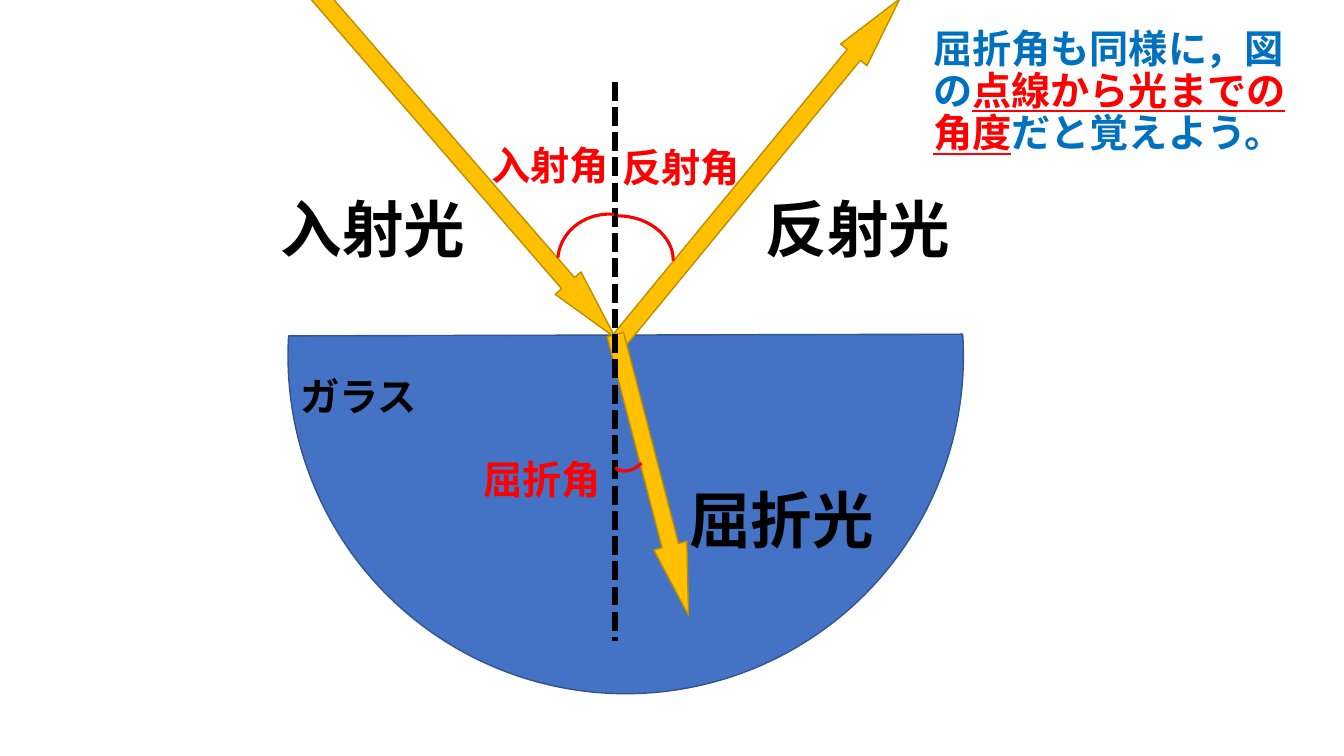
"""Draw a slide on the reflection and refraction of light in glass."""
from dataclasses import dataclass

import lxml.etree
import pptx
import pptx.dml.color
import pptx.enum.dml
import pptx.enum.shapes
import pptx.enum.text
import pptx.oxml.ns
import pptx.util

Cm = pptx.util.Cm
Pt = pptx.util.Pt
Kind = pptx.enum.shapes.MSO_SHAPE
Align = pptx.enum.text.PP_ALIGN
FONT = "Noto Sans CJK JP"
HUES = {
    "black": "000000", "red": "FF0000", "blue": "0070C0",
    "glass": "4472C4", "rim": "325491", "ray": "FFC000", "edge": "BD8E00",
}
BODY = {"line_spacing": 0.9, "space_before": Pt(10)}
MID = {**BODY, "alignment": Align.CENTER}


@dataclass
class Run:
    text: str
    hue: str
    under: bool = False


@dataclass
class Label:
    left: float
    top: float
    width: float
    high: float
    size: int
    runs: list[Run]
    form: dict
    wrap: bool = True


@dataclass
class Figure:
    kind: Kind
    left: float
    top: float
    width: float
    high: float
    turn: float
    line: str
    thick: float
    fill: str | None = None
    adjust: tuple[float, ...] = ()


def color(name: str) -> pptx.dml.color.RGBColor:
    """Return the named colour."""
    return pptx.dml.color.RGBColor.from_string(HUES[name])


def apply(target: object, form: dict) -> None:
    """Set each format value on the target."""
    for key, value in form.items():
        setattr(target, key, value)


def write(slide: pptx.slide.Slide, label: Label) -> None:
    """Add a text label."""
    box = slide.shapes.add_textbox(
        Cm(label.left), Cm(label.top), Cm(label.width), Cm(label.high))
    box.text_frame.word_wrap = label.wrap
    para = box.text_frame.paragraphs[0]
    apply(para, label.form)
    for part in label.runs:
        run = para.add_run()
        run.text = part.text
        apply(run.font, {"name": FONT, "size": Pt(label.size),
                         "bold": True, "underline": part.under})
        run.font.color.rgb = color(part.hue)
        east = lxml.etree.SubElement(
            run.font._element, pptx.oxml.ns.qn("a:ea"))
        east.set("typeface", FONT)


def draw(slide: pptx.slide.Slide, fig: Figure) -> None:
    """Add a preset shape."""
    shape = slide.shapes.add_shape(
        fig.kind, Cm(fig.left), Cm(fig.top), Cm(fig.width), Cm(fig.high))
    shape.rotation = fig.turn
    shape.shadow.inherit = False
    for index, value in enumerate(fig.adjust):
        shape.adjustments[index] = value
    if fig.fill:
        shape.fill.solid()
        shape.fill.fore_color.rgb = color(fig.fill)
    else:
        shape.fill.background()
    shape.line.color.rgb = color(fig.line)
    shape.line.width = Pt(fig.thick)


def normal(slide: pptx.slide.Slide) -> None:
    """Add the dashed line at right angles to the glass."""
    line = slide.shapes.add_connector(
        pptx.enum.shapes.MSO_CONNECTOR.STRAIGHT,
        Cm(15.49), Cm(2.06), Cm(15.49), Cm(16.15))
    line.line.color.rgb = color("black")
    apply(line.line, {"width": Pt(4.5),
                      "dash_style": pptx.enum.dml.MSO_LINE.SQUARE_DOT})
    lxml.etree.SubElement(
        line._element.spPr, pptx.oxml.ns.qn("a:effectLst"))


def ray(left: float, top: float, high: float, turn: float) -> Figure:
    """Describe a ray of light."""
    return Figure(Kind.DOWN_ARROW, left, top, 0.86, high, turn,
                  "edge", 1, "ray", (0.5, 2.12))


def arc(left: float, top: float, width: float, high: float,
        turn: float) -> Figure:
    """Describe the mark of an angle."""
    return Figure(Kind.ARC, left, top, width, high, turn, "red", 2.25)


def title(text: str, left: float, top: float, width: float,
          size: int = 44) -> Label:
    """Describe a black centred label."""
    return Label(left, top, width, 1.45, size, [Run(text, "black")], MID)


def angle(text: str, left: float, top: float) -> Label:
    """Describe the red name of an angle."""
    return Label(left, top, 3.51, 1.45, 28, [Run(text, "red")], {}, False)


GLASS = Figure(Kind.CHORD, 7.26, 0.46, 17.02, 17.02, 311.3,
               "rim", 1, "glass", (27, 139.27))
RAYS = [
    ray(11.28, -1.68, 11.61, 319.1),
    ray(18.69, -1.3, 11.2, 219.4),
    ray(16, 8.31, 7.32, 345.4),
]
ARCS = [
    arc(14.15, 5.44, 2.82, 2.26, 0),
    arc(14.17, 5.28, 2.41, 2.64, 274.7),
    arc(15.34, 11, 1.09, 0.79, 134.5),
]
TITLES = [
    title("入射光", 6.68, 4.9, 5.44),
    title("反射光", 18.77, 4.9, 5.72),
    title("屈折光", 16.56, 12.22, 6.27),
    title("ガラス", 6.32, 9.4, 5.44, 28),
]
ANGLES = [
    angle("入射角", 12.14, 3.43),
    angle("反射角", 15.44, 3.48),
    angle("屈折角", 11.94, 11.35),
]
NOTE = Label(23.27, 0.61, 10.11, 3.84, 28, [
    Run("屈折角も同様に，図の", "blue"),
    Run("点線から光までの角度", "red", True),
    Run("だと覚えよう。", "blue"),
], BODY)


def main() -> None:
    """Build and save the slide."""
    deck = pptx.Presentation()
    apply(deck, {"slide_width": Cm(33.87), "slide_height": Cm(19.05)})
    slide = deck.slides.add_slide(deck.slide_layouts[6])
    for fig in [GLASS, *RAYS]:
        draw(slide, fig)
    for label in TITLES:
        write(slide, label)
    normal(slide)
    for fig in ARCS:
        draw(slide, fig)
    for label in [*ANGLES, NOTE]:
        write(slide, label)
    deck.save("out.pptx")


if __name__ == "__main__":
    main()
